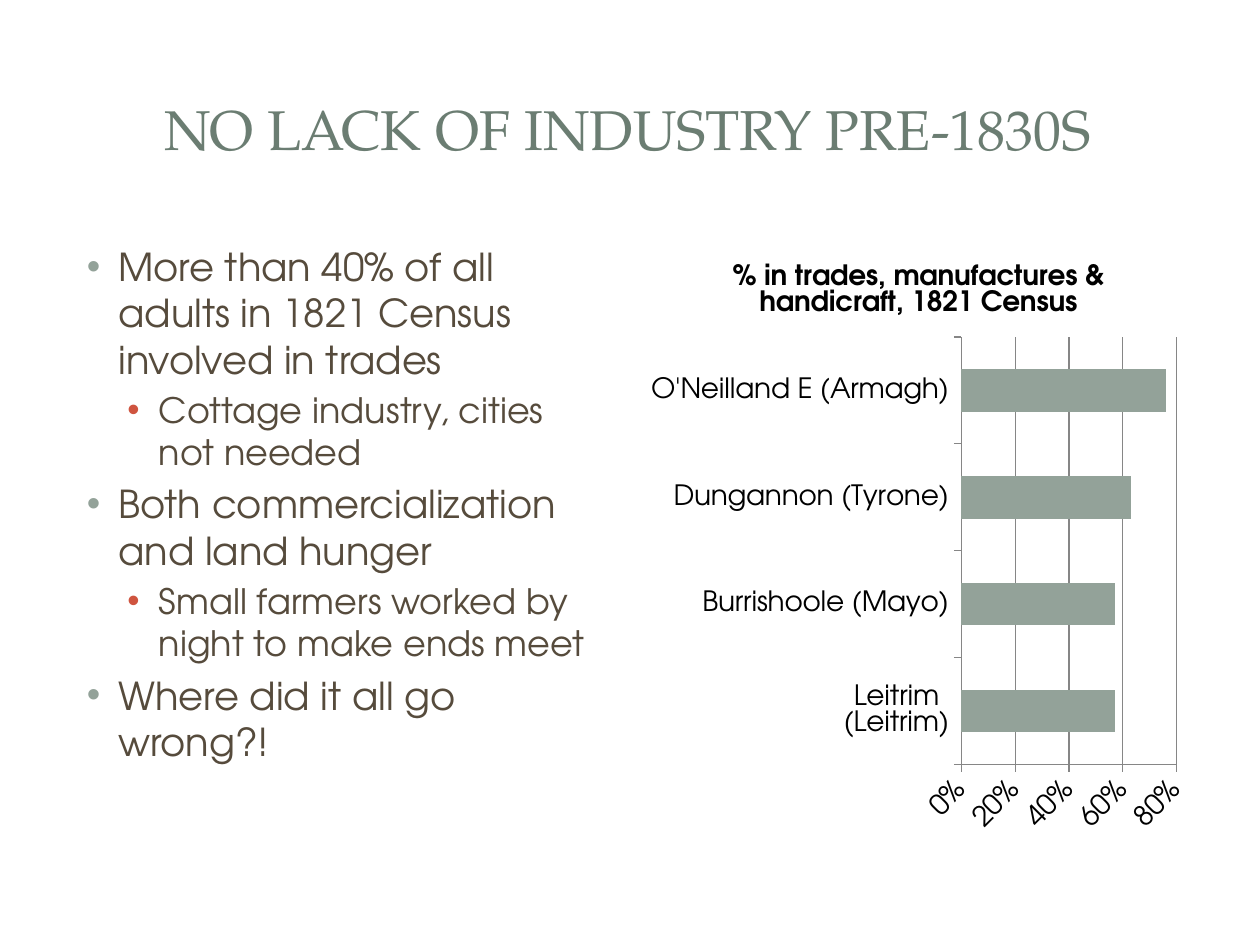
"""Build a slide on Irish industry before the 1830s with bullets and a bar chart."""
from pptx import Presentation
from pptx.chart.data import CategoryChartData
from pptx.dml.color import RGBColor
from pptx.enum import chart as ch, shapes, text
from pptx.oxml import parse_xml
from pptx.oxml.ns import nsdecls
from pptx.util import Inches, Pt

TITLE = "NO LACK OF INDUSTRY PRE-1830S"
BULLETS = [
    (0, "More than 40% of all adults in 1821 Census involved in trades"),
    (1, "Cottage industry, cities not needed"),
    (0, "Both commercialization and land hunger"),
    (1, "Small farmers worked by night to make ends meet"),
    (0, "Where did it all go wrong?!"),
]
CHART_TITLE = "% in trades, manufactures & handicraft, 1821 Census"
TRADES = {
    "Leitrim\n(Leitrim)": 0.57,
    "Burrishoole (Mayo)": 0.57,
    "Dungannon (Tyrone)": 0.63,
    "O'Neilland E (Armagh)": 0.76,
}
ROUNDED = shapes.MSO_SHAPE.ROUNDED_RECTANGLE
SQUARE = shapes.MSO_SHAPE.RECTANGLE
PANELS = [
    (ROUNDED, (0.1, 0.11, 9.8, 7.29), 100),
    (SQUARE, (0.3, 0.3, 9.4, 1.45), 83),
    (SQUARE, (0.41, 0.41, 9.17, 1.22), 100),
]

WHITE = RGBColor(0xFF, 0xFF, 0xFF)
SAGE = RGBColor(0x93, 0xA2, 0x99)
DARK_SAGE = RGBColor(0x6B, 0x7D, 0x72)
RED = RGBColor(0xCF, 0x54, 0x3F)
BROWN = RGBColor(0x56, 0x4B, 0x3C)
GREY = RGBColor(0x86, 0x86, 0x86)
BLACK = RGBColor(0, 0, 0)
HEAD_FONT, BODY_FONT = "TeX Gyre Pagella", "TeX Gyre Adventor"

LEFT, TOP, COLUMN, HEIGHT, GAP = 0.47, 1.88, 4.42, 4.82, 0.19
LEVELS = [(22, 0.37, SAGE), (20, 0.69, RED)]
HANGING = 0.25


def place(shape, left, top, width, height):
    shape.left, shape.top = Inches(left), Inches(top)
    shape.width, shape.height = Inches(width), Inches(height)


def style(font, name, size, color, bold=False):
    font.name, font.size, font.bold = name, Pt(size), bold
    font.color.rgb = color


def add_panels(page):
    tree = page.shapes._spTree
    for order, (kind, box, opacity) in enumerate(PANELS):
        panel = page.shapes.add_shape(kind, *map(Inches, box))
        panel.shadow.inherit = False
        panel.line.fill.background()
        panel.fill.solid()
        panel.fill.fore_color.rgb = WHITE
        if kind == ROUNDED:
            panel.adjustments[0] = 0.02
        if opacity < 100:
            color = panel._element.spPr.find(".//{*}srgbClr")
            color.append(parse_xml(f'<a:alpha {nsdecls("a")} val="{opacity * 1000}"/>'))
        tree.insert(2 + order, panel._element)


def add_bullet(para, indent, color):
    props = para._p.get_or_add_pPr()
    props.set("marL", str(Inches(indent)))
    props.set("indent", str(-Inches(HANGING)))
    for xml in (
        f'<a:buClr {nsdecls("a")}><a:srgbClr val="{color}"/></a:buClr>',
        f'<a:buFont {nsdecls("a")} typeface="Arial"/>',
        f'<a:buChar {nsdecls("a")} char="•"/>',
    ):
        props.append(parse_xml(xml))


def fill_title(box):
    place(box, LEFT, 0.45, 9.03, 1.14)
    frame = box.text_frame
    frame.text = TITLE
    frame.vertical_anchor = text.MSO_ANCHOR.MIDDLE
    para = frame.paragraphs[0]
    para.alignment = text.PP_ALIGN.CENTER
    style(para.font, HEAD_FONT, 32, DARK_SAGE)


def fill_body(box):
    place(box, LEFT, TOP, COLUMN, HEIGHT)
    frame = box.text_frame
    frame.text = "\n".join(words for _, words in BULLETS)
    frame.vertical_anchor = text.MSO_ANCHOR.TOP
    for para, (level, _) in zip(frame.paragraphs, BULLETS):
        size, indent, color = LEVELS[level]
        para.level = level
        para.space_before = Pt(size * 0.2)
        style(para.font, BODY_FONT, size, BROWN)
        add_bullet(para, indent, color)


def add_trades_chart(page):
    data = CategoryChartData(number_format="0%")
    data.categories = list(TRADES)
    data.add_series(CHART_TITLE, list(TRADES.values()))
    chart = page.shapes.add_chart(
        ch.XL_CHART_TYPE.BAR_CLUSTERED, Inches(LEFT + COLUMN + GAP), Inches(TOP),
        Inches(COLUMN), Inches(HEIGHT), data).chart
    style(chart.font, BODY_FONT, 16, BLACK)
    chart.has_legend = False
    chart.has_title = True
    chart.chart_title.text_frame.text = CHART_TITLE
    style(chart.chart_title.text_frame.paragraphs[0].font, BODY_FONT, 16, BLACK, True)

    plot = chart.plots[0]
    plot.gap_width, plot.vary_by_categories = 150, False
    bars = plot.series[0].format.fill
    bars.solid()
    bars.fore_color.rgb = SAGE

    values = chart.value_axis
    values.minimum_scale, values.maximum_scale, values.major_unit = 0, 0.8, 0.2
    values.has_major_gridlines = True
    values.tick_labels.number_format = "0%"
    values.tick_labels.number_format_is_linked = False
    chart.category_axis.has_major_gridlines = False
    for axis in (values, chart.category_axis):
        axis.major_tick_mark = ch.XL_TICK_MARK.OUTSIDE
        style(axis.tick_labels.font, BODY_FONT, 16, BLACK)
    for line in (values.format.line, values.major_gridlines.format.line,
                 chart.category_axis.format.line):
        line.color.rgb = GREY
    values._element.txPr.bodyPr.set("rot", str(-45 * 60000))


def main():
    deck = Presentation()
    deck.slide_width, deck.slide_height = Inches(10), Inches(7.5)
    page = deck.slides.add_slide(deck.slide_layouts[1])
    add_panels(page)
    fill_title(page.shapes.title)
    fill_body(next(box for box in page.placeholders if box.placeholder_format.idx == 1))
    add_trades_chart(page)
    deck.save("out.pptx")


if __name__ == "__main__":
    main()
